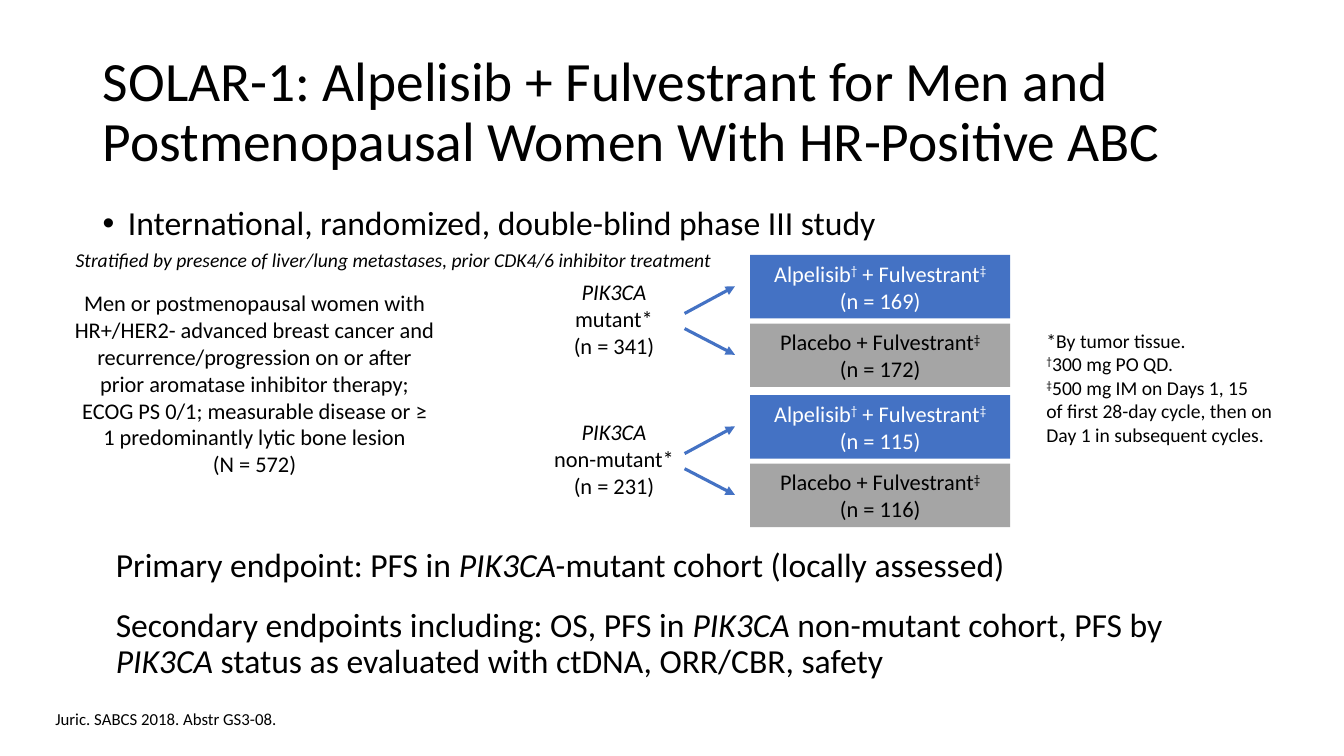
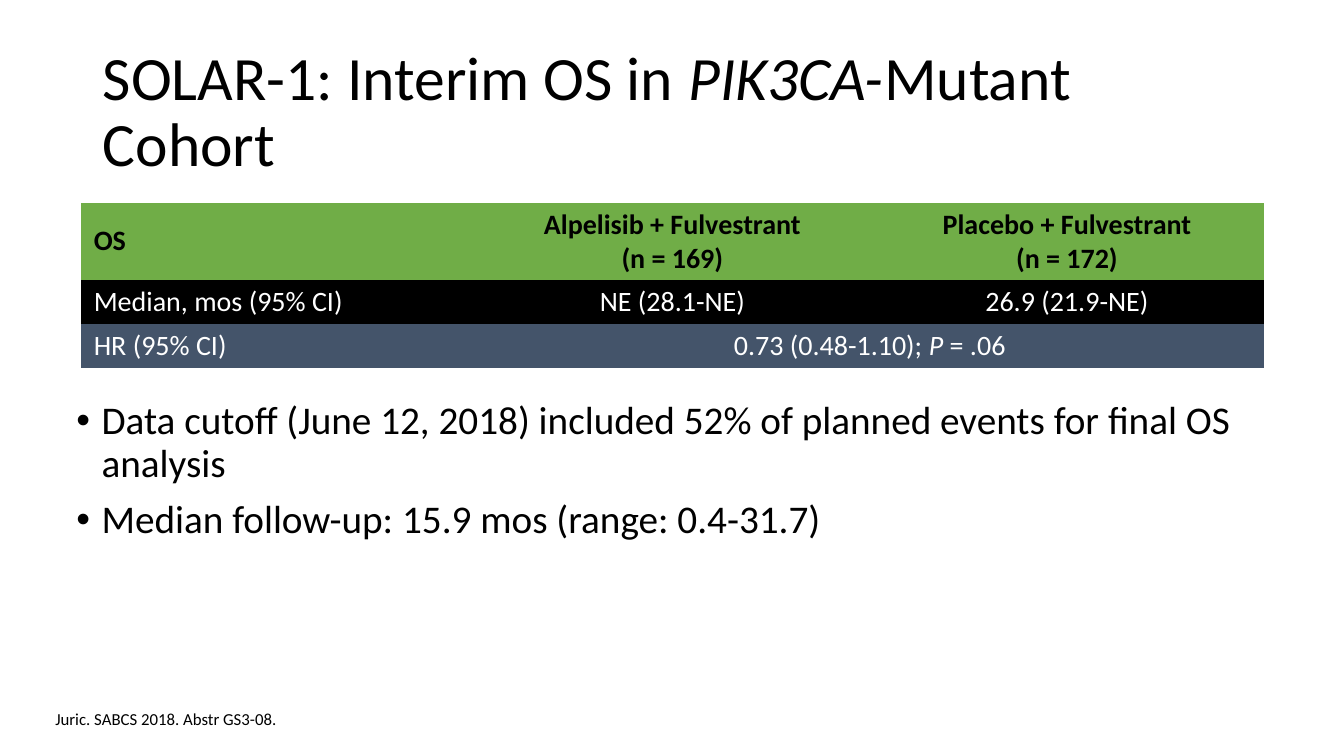
from pptx import Presentation
from pptx.dml.color import RGBColor
from pptx.enum.shapes import MSO_CONNECTOR, MSO_SHAPE
from pptx.enum.text import MSO_ANCHOR, MSO_AUTO_SIZE, PP_ALIGN
from pptx.oxml.ns import qn
from pptx.util import Inches, Pt
from lxml.etree import SubElement

FONT = "Calibri"
BLACK, WHITE = "000000", "FFFFFF"
BLUE, GRAY, GREEN, SLATE = "4472C4", "A5A5A5", "70AD47", "44546A"
NO_STYLE = "{2D5ABB26-0587-4C30-8999-92F81FD0307C}"
TITLE_ONLY = 5
COHORT_STEP, ARM_STEP = 1.39, 0.68

ITALIC = {"italic": True}
GENE = ("PIK3CA", ITALIC)
DAGGER = ("†", {"superscript": True})
DOUBLE_DAGGER = ("‡", {"superscript": True})

CENTERED = {"alignment": PP_ALIGN.CENTER}
BODY = {"line_spacing": 0.9, "space_before": Pt(10)}


def color(value):
    return RGBColor.from_string(value)


def set_attributes(target, values):
    for name, value in values.items():
        setattr(target, name, value)


def set_indent(paragraph, indent, bullet):
    properties = paragraph._p.get_or_add_pPr()
    properties.set("marL", str(Inches(indent)))
    properties.set("indent", str(-Inches(indent) if bullet else 0))
    if bullet:
        SubElement(properties, qn("a:buFont")).set("typeface", "Arial")
        SubElement(properties, qn("a:buChar")).set("char", bullet)


def add_run(paragraph, text, size, text_color, bold=False, italic=False, superscript=False):
    run = paragraph.add_run()
    run.text = text
    set_attributes(run.font, {"name": FONT, "size": Pt(size), "bold": bold, "italic": italic})
    run.font.color.rgb = color(text_color)
    if superscript:
        run.font._element.set("baseline", "30000")


def write(frame, paragraphs, size, text_color=BLACK, bold=False, indent=0, bullet=None, **layout):
    for index, runs in enumerate(paragraphs):
        paragraph = frame.paragraphs[0] if index == 0 else frame.add_paragraph()
        if indent:
            set_indent(paragraph, indent, bullet)
        set_attributes(paragraph, layout)
        if index == 0:
            paragraph.space_before = Pt(0)
        for item in [runs] if isinstance(runs, str) else runs:
            text, style = (item, {}) if isinstance(item, str) else item
            for number, line in enumerate(text.split("\n")):
                if number:
                    paragraph.add_line_break()
                add_run(paragraph, line, size, text_color, bold, **style)


def add_text(slide, place, paragraphs, size, anchor=MSO_ANCHOR.TOP, **layout):
    frame = slide.shapes.add_textbox(*map(Inches, place)).text_frame
    set_attributes(frame, {"word_wrap": True, "vertical_anchor": anchor})
    write(frame, paragraphs, size, **layout)


def add_slide(presentation, title_runs, title_size):
    slide = presentation.slides.add_slide(presentation.slide_layouts[TITLE_ONLY])
    title = slide.shapes.title
    set_attributes(title, {"left": Inches(0.92), "top": Inches(0.4),
                           "width": Inches(11.5), "height": Inches(1.45)})
    set_attributes(title.text_frame, {"word_wrap": True, "auto_size": MSO_AUTO_SIZE.NONE,
                                      "vertical_anchor": MSO_ANCHOR.MIDDLE})
    write(title.text_frame, [title_runs], title_size, alignment=PP_ALIGN.LEFT, line_spacing=0.9)
    add_text(slide, (0.45, 6.98, 8.76, 0.3), ["Juric. SABCS 2018. Abstr GS3-08."], 12,
             anchor=MSO_ANCHOR.BOTTOM)
    return slide


def add_arm(slide, top, fill, text_color, paragraphs):
    shape = slide.shapes.add_shape(MSO_SHAPE.RECTANGLE, *map(Inches, (7.44, top, 2.58, 0.63)))
    shape.shadow.inherit = False
    shape.fill.solid()
    shape.fill.fore_color.rgb = color(fill)
    shape.line.fill.background()
    set_attributes(shape.text_frame, {"word_wrap": False, "vertical_anchor": MSO_ANCHOR.MIDDLE})
    write(shape.text_frame, paragraphs, 16, text_color, **CENTERED)


def add_arrow(slide, *ends):
    arrow = slide.shapes.add_connector(MSO_CONNECTOR.STRAIGHT, *map(Inches, ends))
    arrow.line.color.rgb = color(BLUE)
    arrow.line.width = Pt(2.25)
    SubElement(arrow.line._get_or_add_ln(), qn("a:tailEnd")).set("type", "triangle")
    SubElement(arrow._element.spPr, qn("a:effectLst"))


def add_cohort(slide, offset, label, total, alpelisib_count, placebo_count):
    add_text(slide, (5.34, 2.71 + offset, 1.5, 0.91), [[GENE], label, f"(n = {total})"],
             16, **CENTERED)
    add_arrow(slide, 6.79, 3.11 + offset, 7.29, 2.84 + offset)
    add_arrow(slide, 6.79, 3.26 + offset, 7.29, 3.52 + offset)
    add_arm(slide, 2.53 + offset, BLUE, WHITE,
            [["Alpelisib", DAGGER, " + Fulvestrant", DOUBLE_DAGGER], f"(n = {alpelisib_count})"])
    add_arm(slide, 2.53 + ARM_STEP + offset, GRAY, BLACK,
            [["Placebo + Fulvestrant", DOUBLE_DAGGER], f"(n = {placebo_count})"])


def add_survival_table(slide):
    rows = [
        (0.77, GREEN, BLACK, True, [["OS"], ["Alpelisib + Fulvestrant", "(n = 169)"],
                                    ["Placebo + Fulvestrant", "(n = 172)"]]),
        (0.43, BLACK, WHITE, False, [["Median, mos (95% CI)"], ["NE (28.1-NE)"],
                                     ["26.9 (21.9-NE)"]]),
        (0.43, SLATE, WHITE, False, [["HR (95% CI)"],
                                     [["0.73 (0.48-1.10); ", ("P", ITALIC), " = .06"]]]),
    ]
    place = map(Inches, (0.8, 2.01, 11.74, 1.63))
    table = slide.shapes.add_table(len(rows), 3, *place).table
    set_attributes(table, {"first_row": False, "horz_banding": False})
    table._tbl.tblPr.find(qn("a:tableStyleId")).text = NO_STYLE
    table.cell(2, 1).merge(table.cell(2, 2))
    for row_index, (height, fill, text_color, bold, cells) in enumerate(rows):
        table.rows[row_index].height = Inches(height)
        for column_index, paragraphs in enumerate(cells):
            cell = table.cell(row_index, column_index)
            set_attributes(cell, {"margin_left": Inches(0.13), "margin_right": Inches(0.13),
                                  "vertical_anchor": MSO_ANCHOR.MIDDLE})
            cell.fill.solid()
            cell.fill.fore_color.rgb = color(fill)
            alignment = PP_ALIGN.CENTER if column_index else PP_ALIGN.LEFT
            write(cell.text_frame, paragraphs, 20, text_color, bold, alignment=alignment)


def build_design_slide(presentation):
    slide = add_slide(presentation, "SOLAR-1: Alpelisib + Fulvestrant for Men and "
                      "Postmenopausal Women With HR-Positive ABC", 39.6)
    add_text(slide, (0.92, 2, 11.5, 0.5),
             ["International, randomized, double-blind phase III study"], 24,
             indent=0.25, bullet="•", **BODY)
    add_text(slide, (0.64, 2.41, 6.53, 0.34),
             [[("Stratified by presence of liver/lung metastases, "
                "prior CDK4/6 inhibitor treatment", ITALIC)]], 14, **CENTERED)
    add_text(slide, (0.64, 2.82, 3.77, 1.99),
             ["Men or postmenopausal women with HR+/HER2- advanced breast cancer and "
              "recurrence/progression on or after prior aromatase inhibitor therapy; "
              "ECOG PS 0/1; measurable disease or ≥ 1 predominantly lytic bone lesion",
              "(N = 572)"], 16, **CENTERED)
    add_cohort(slide, 0, "mutant*", 341, 169, 172)
    add_cohort(slide, COHORT_STEP, "non-mutant*", 231, 115, 116)
    add_text(slide, (10.28, 3.21, 2.58, 1.28),
             ["*By tumor tissue.", [DAGGER, "300 mg PO QD."],
              [DOUBLE_DAGGER, "500 mg IM on Days 1, 15\nof first 28-day cycle, then on\n"
               "Day 1 in subsequent cycles."]], 14)
    add_text(slide, (0.67, 5.39, 11.9, 1.37),
             [["Primary endpoint: PFS in ", GENE, ("-", ITALIC),
               "mutant cohort (locally assessed)"],
              ["Secondary endpoints including: OS, PFS in ", GENE,
               " non-mutant cohort, PFS by ", GENE,
               " status as evaluated with ctDNA, ORR/CBR, safety"]], 24,
             indent=0.38, space_after=Pt(7), **BODY)


def build_survival_slide(presentation):
    slide = add_slide(presentation, ["SOLAR-1: Interim OS in ", GENE, ("-", ITALIC),
                                     "Mutant Cohort"], 44)
    add_survival_table(slide)
    add_text(slide, (0.66, 3.93, 11.9, 3.06),
             ["Data cutoff (June 12, 2018) included 52% of planned events for final OS analysis",
              "Median follow-up: 15.9 mos (range: 0.4-31.7)"], 28,
             indent=0.25, bullet="•", **BODY)


def main():
    presentation = Presentation()
    set_attributes(presentation, {"slide_width": Inches(13.33), "slide_height": Inches(7.5)})
    build_design_slide(presentation)
    build_survival_slide(presentation)
    presentation.save("out.pptx")


if __name__ == "__main__":
    main()
